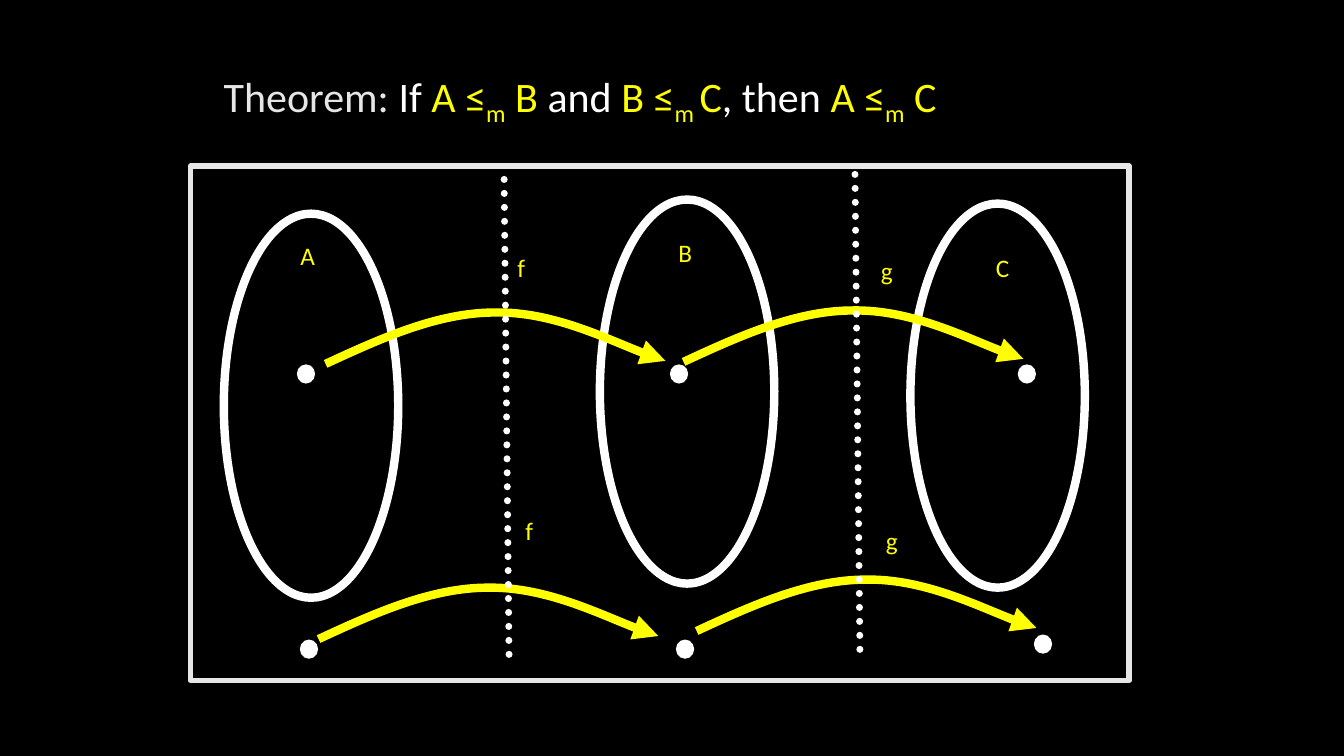
from itertools import product

from lxml.etree import SubElement
from pptx import Presentation
from pptx.dml.color import RGBColor
from pptx.enum.dml import MSO_LINE
from pptx.enum.shapes import MSO_CONNECTOR, MSO_SHAPE
from pptx.enum.text import MSO_AUTO_SIZE as AutoSize, PP_ALIGN
from pptx.oxml.ns import qn
from pptx.util import Pt

PX = 9144
WHITE, YELLOW, GRAY, BLACK = "FFFFFF", "FFFF00", "E7E6E6", "000000"

THEOREM = [
    ("Theorem: ", GRAY, False), ("If ", WHITE, False),
    ("A ≤", YELLOW, False), ("m", YELLOW, True), (" B ", YELLOW, False),
    ("and ", WHITE, False),
    ("B ≤", YELLOW, False), ("m ", YELLOW, True), ("C", YELLOW, False),
    (", then ", WHITE, False),
    ("A ≤", YELLOW, False), ("m", YELLOW, True), (" C", YELLOW, False),
]
SETS = [(33, 47), (406, 33), (714, 37)]
LABELS = [
    ("A", 95, 68, 42), ("B", 471, 66, 39), ("C", 784, 80, 43),
    ("f", 313, 80, 30), ("f", 321, 341, 30),
    ("g", 672, 83, 37), ("g", 677, 351, 37),
]
ELEMENTS = [(106, 197), (476, 197), (821, 197),
            (109, 470), (482, 470), (837, 465)]
MAPPINGS = [(134, 196), (127, 469), (489, 194), (502, 461)]
MAPPING_CURVE = [(56, -26), (112, -51), (168, -51),
                 (225, -52), (309, -11), (337, -3)]
DIVIDERS = [(311, 13), (659, 8)]


def color(hex_value):
    return RGBColor.from_string(hex_value)


def emu(*lengths):
    return [length * PX for length in lengths]


def style_line(part, hex_value, width):
    part.line.color.rgb = color(hex_value)
    part.line.width = Pt(width)
    return part._element.spPr.find(qn("a:ln"))


def add_outline(shapes, kind, box, hex_value, width, fill=None):
    outline = shapes.add_shape(kind, *emu(*box))
    outline.shadow.inherit = False
    if fill:
        outline.fill.solid()
        outline.fill.fore_color.rgb = color(fill)
    else:
        outline.fill.background()
    style_line(outline, hex_value, width)


def add_text(shapes, box, pieces, size, align, wrap):
    frame = shapes.add_textbox(*emu(*box)).text_frame
    frame.word_wrap = wrap
    frame.auto_size = AutoSize.SHAPE_TO_FIT_TEXT
    paragraph = frame.paragraphs[0]
    paragraph.alignment = align
    for words, hex_value, subscript in pieces:
        run = paragraph.add_run()
        run.text = words
        run.font.name = "Calibri"
        run.font.size = Pt(size)
        run.font.color.rgb = color(hex_value)
        if subscript:
            run.font._element.set("baseline", "-25000")


def add_mapping(shapes, x, y):
    builder = shapes.build_freeform(x, y, scale=PX)
    builder.add_line_segments(
        [(x + dx, y + dy) for dx, dy in MAPPING_CURVE], close=False)
    mapping = builder.convert_to_shape()
    mapping.shadow.inherit = False
    mapping.fill.background()
    SubElement(style_line(mapping, YELLOW, 6), qn("a:tailEnd"), type="triangle")
    segments = list(mapping._element.iter(qn("a:lnTo")))
    outline = segments[0].getparent()
    for first in range(0, len(segments), 3):
        curve = SubElement(outline, qn("a:cubicBezTo"))
        for segment in segments[first:first + 3]:
            curve.append(segment[0])
            outline.remove(segment)


def add_divider(shapes, x, y):
    divider = shapes.add_connector(
        MSO_CONNECTOR.STRAIGHT, *emu(x, y, x + 5, y + 484))
    SubElement(divider._element.spPr, qn("a:effectLst"))
    style_line(divider, WHITE, 5).set("cap", "rnd")
    divider.line.dash_style = MSO_LINE.ROUND_DOT
    spPr = divider._element.spPr
    spPr.append(spPr.find(qn("a:effectLst")))


def add_theorem(slide, box):
    add_text(slide.shapes, box, THEOREM, 30, PP_ALIGN.LEFT, True)


def add_diagram(slide, box):
    left, top, width, height = box
    shapes = slide.shapes.add_group_shape().shapes
    for x, y in SETS:
        add_outline(shapes, MSO_SHAPE.OVAL, (left + x, top + y, 173, 381), WHITE, 6)
    for x, y in ELEMENTS:
        add_outline(shapes, MSO_SHAPE.OVAL, (left + x, top + y, 17, 18),
                    WHITE, 0.75, WHITE)
    for x, y in MAPPINGS:
        add_mapping(shapes, left + x, top + y)
    for x, y in DIVIDERS:
        add_divider(shapes, left + x, top + y)
    add_outline(shapes, MSO_SHAPE.RECTANGLE, box, GRAY, 4)
    for name, x, y, label_width in LABELS:
        add_text(shapes, (left + x, top + y, label_width, 48),
                 [(name, YELLOW, False)], 18, PP_ALIGN.CENTER, False)


def main():
    deck = Presentation()
    deck.slide_width, deck.slide_height = emu(1333, 750)
    slide = deck.slides.add_slide(deck.slide_layouts[6])
    slide.background.fill.solid()
    slide.background.fill.fore_color.rgb = color(BLACK)
    add_theorem(slide, (212, 65, 895, 58))
    add_diagram(slide, (189, 165, 931, 510))
    deck.save("out.pptx")


if __name__ == "__main__":
    main()
